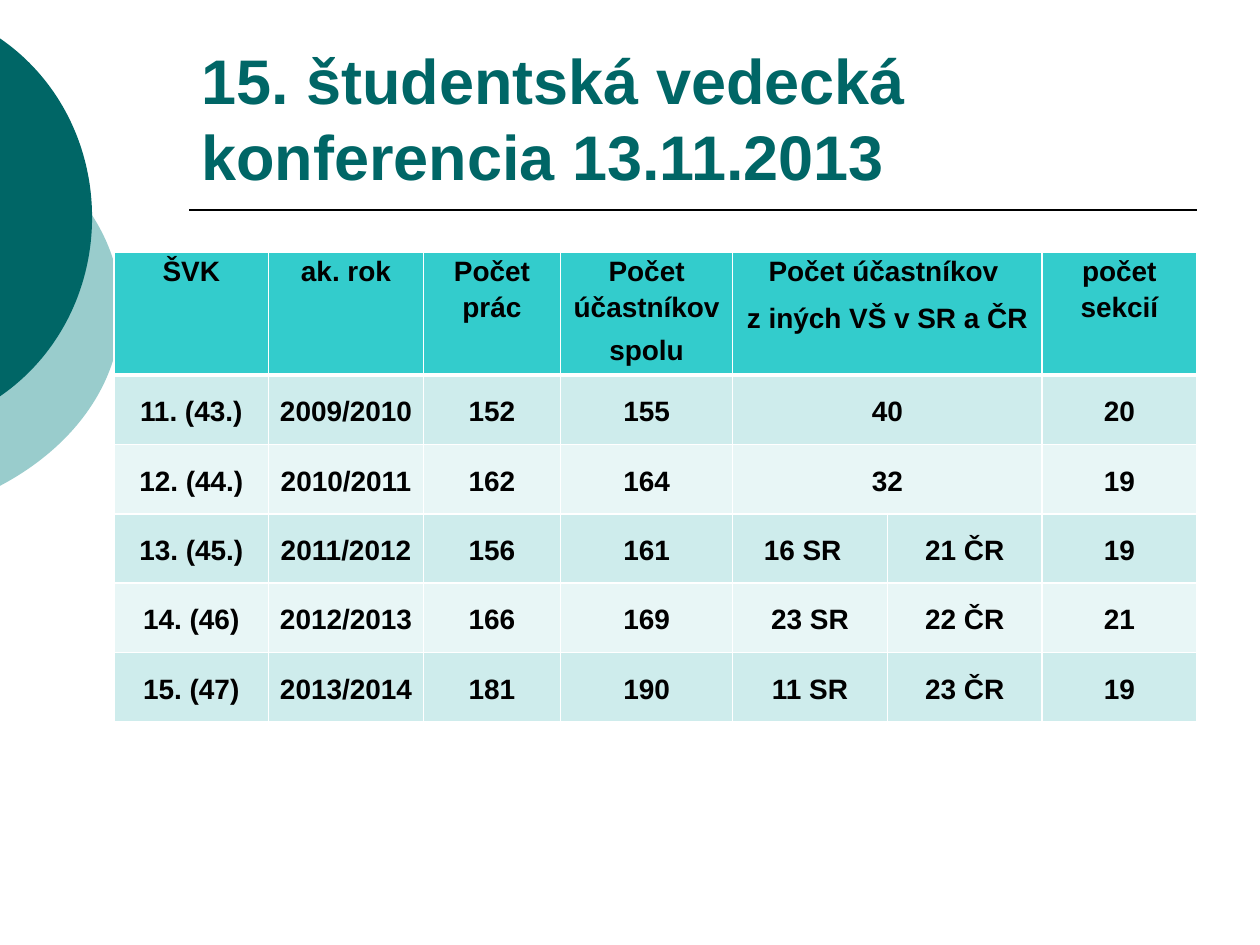
from dataclasses import dataclass

from lxml import etree
from pptx import Presentation
from pptx.dml.color import RGBColor
from pptx.enum import shapes, text
from pptx.oxml import ns
from pptx.util import Pt

TEAL = RGBColor(0x00, 0x66, 0x66)
PALE_TEAL = RGBColor(0x99, 0xCC, 0xCC)
HEADER = RGBColor(0x33, 0xCC, 0xCC)
BANDS = (RGBColor(0xCE, 0xEC, 0xEC), RGBColor(0xE8, 0xF6, 0xF6))
BLACK = RGBColor(0, 0, 0)
WHITE = RGBColor(0xFF, 0xFF, 0xFF)
FONT = "Arial"


@dataclass
class Disc:
    left: float
    top: float
    width: float
    height: float
    chord: float
    bend_x: float
    bend_y: float
    color: RGBColor


@dataclass
class Cell:
    value: str
    span: int = 1
    right: float = 3.6
    tight: bool = False


DISCS = [
    Disc(-254.9, 54, 324, 246.2, 100.8, 43.9, 77.8, PALE_TEAL),
    Disc(-190.8, 0, 243.4, 248.4, 102.6, 33.8, 79.6, TEAL),
]
COLS = [88.4, 88.4, 78.5, 98.3, 88.4, 88.4, 88.4]
HEADER_HEIGHT, ROW_HEIGHT = 29.5, 39.6
ROWS = [
    [Cell("ŠVK"), Cell("ak. rok"), Cell("Počet prác"),
     Cell("Počet účastníkov\nspolu", tight=True),
     Cell("Počet účastníkov \nz iných VŠ v SR a ČR", span=2),
     Cell("počet sekcií")],
    [Cell("11. (43.)"), Cell("2009/2010"), Cell("152"), Cell("155"),
     Cell("40", span=2), Cell("20")],
    [Cell("12. (44.)"), Cell("2010/2011"), Cell("162"), Cell("164"),
     Cell("32", span=2), Cell("19")],
    [Cell("13. (45.)"), Cell("2011/2012"), Cell("156"), Cell("161"),
     Cell("16 SR", right=12), Cell("21 ČR"), Cell("19")],
    [Cell("14. (46)"), Cell("2012/2013"), Cell("166"), Cell("169"),
     Cell("23 SR"), Cell("22 ČR"), Cell("21")],
    [Cell("15. (47)"), Cell("2013/2014"), Cell("181"), Cell("190"),
     Cell("11 SR"), Cell("23 ČR"), Cell("19")],
]


def style_font(p, size: float, color: RGBColor) -> None:
    for r in p.runs:
        f = r.font
        f.name, f.size, f.bold = FONT, Pt(size), True
        f.color.rgb = color


def add_step(outline, tag: str, *points: tuple[float, float]) -> None:
    step = etree.SubElement(outline, ns.qn(f"a:{tag}"))
    for x, y in points:
        etree.SubElement(step, ns.qn("a:pt"), x=str(Pt(x)), y=str(Pt(y)))


def draw_disc(s, disc: Disc) -> None:
    right, bottom = disc.left + disc.width, disc.top + disc.height
    corners = [(right, disc.top), (right, bottom), (disc.left, bottom)]
    builder = s.shapes.build_freeform(Pt(disc.left), Pt(disc.top))
    builder.add_line_segments([(Pt(x), Pt(y)) for x, y in corners])
    sp = builder.convert_to_shape()
    outline = sp._element.spPr.find(".//" + ns.qn("a:path"))
    for step in list(outline):
        outline.remove(step)
    edge, mid = -disc.left - 0.5, disc.height / 2
    low, high = mid - disc.chord, mid + disc.chord
    bend = edge + disc.bend_x
    add_step(outline, "moveTo", (edge, low))
    add_step(outline, "cubicBezTo", (bend, mid - disc.bend_y),
             (disc.width, mid - disc.chord * 0.4), (disc.width, mid))
    add_step(outline, "cubicBezTo", (disc.width, mid + disc.chord * 0.4),
             (bend, mid + disc.bend_y), (edge, high))
    add_step(outline, "lnTo", (edge, low))
    add_step(outline, "close")
    sp.shadow.inherit = False
    sp.fill.solid()
    sp.fill.fore_color.rgb = disc.color
    sp.line.fill.background()


def draw_title(s) -> None:
    sp = s.shapes.add_textbox(Pt(108), Pt(23.75), Pt(576), Pt(90))
    tf = sp.text_frame
    tf.word_wrap = True
    tf.vertical_anchor = text.MSO_ANCHOR.BOTTOM
    tf.text = "15. študentská vedecká konferencia 13.11.2013"
    style_font(tf.paragraphs[0], 36, TEAL)


def draw_rule(s) -> None:
    sp = s.shapes.add_connector(shapes.MSO_CONNECTOR.STRAIGHT,
                                Pt(108), Pt(120), Pt(684), Pt(120))
    sp.line.color.rgb = BLACK
    sp.line.width = Pt(1)
    etree.SubElement(sp._element.spPr, ns.qn("a:effectLst"))


def set_borders(cell, top: float, bottom: float) -> None:
    props = cell._tc.get_or_add_tcPr()
    for side, width in (("L", 1), ("R", 1), ("T", top), ("B", bottom)):
        ln = etree.SubElement(props, ns.qn(f"a:ln{side}"), w=str(Pt(width)))
        fill = etree.SubElement(ln, ns.qn("a:solidFill"))
        etree.SubElement(fill, ns.qn("a:srgbClr"), val=str(WHITE))


def fill_cell(cell, content: Cell, is_header: bool) -> None:
    cell.margin_left, cell.margin_right = Pt(3.6), Pt(content.right)
    cell.margin_top = cell.margin_bottom = Pt(0)
    cell.vertical_anchor = (text.MSO_ANCHOR.TOP if is_header
                            else text.MSO_ANCHOR.MIDDLE)
    tf = cell.text_frame
    tf.text = content.value
    for p in tf.paragraphs:
        p.alignment = text.PP_ALIGN.CENTER
        p.line_spacing = 1.15
        p.space_before = p.space_after = Pt(3)
        style_font(p, 16, BLACK)
    if content.tight:
        p = tf.paragraphs[-1]
        p.space_before, p.space_after = Pt(1.2), Pt(0)


def draw_table(s) -> None:
    frame = s.shapes.add_table(len(ROWS), len(COLS), Pt(65.1), Pt(144),
                               Pt(sum(COLS)), Pt(270.7))
    table = frame.table
    table.first_row = table.horz_banding = False
    for column, width in zip(table.columns, COLS):
        column.width = Pt(width)
    for i, row in enumerate(ROWS):
        table.rows[i].height = Pt(ROW_HEIGHT if i else HEADER_HEIGHT)
        for j in range(len(COLS)):
            cell = table.cell(i, j)
            set_borders(cell, 3 if i == 1 else 1, 1 if i else 3)
            cell.fill.solid()
            cell.fill.fore_color.rgb = BANDS[(i - 1) % 2] if i else HEADER
        j = 0
        for content in row:
            cell = table.cell(i, j)
            if content.span > 1:
                cell.merge(table.cell(i, j + content.span - 1))
            fill_cell(cell, content, i == 0)
            j += content.span
    frame.height = Pt(270.7)


def main() -> None:
    prs = Presentation()
    prs.slide_width, prs.slide_height = Pt(720), Pt(540)
    s = prs.slides.add_slide(prs.slide_layouts[6])
    for disc in DISCS:
        draw_disc(s, disc)
    draw_rule(s)
    draw_title(s)
    draw_table(s)
    prs.save("out.pptx")


if __name__ == "__main__":
    main()
